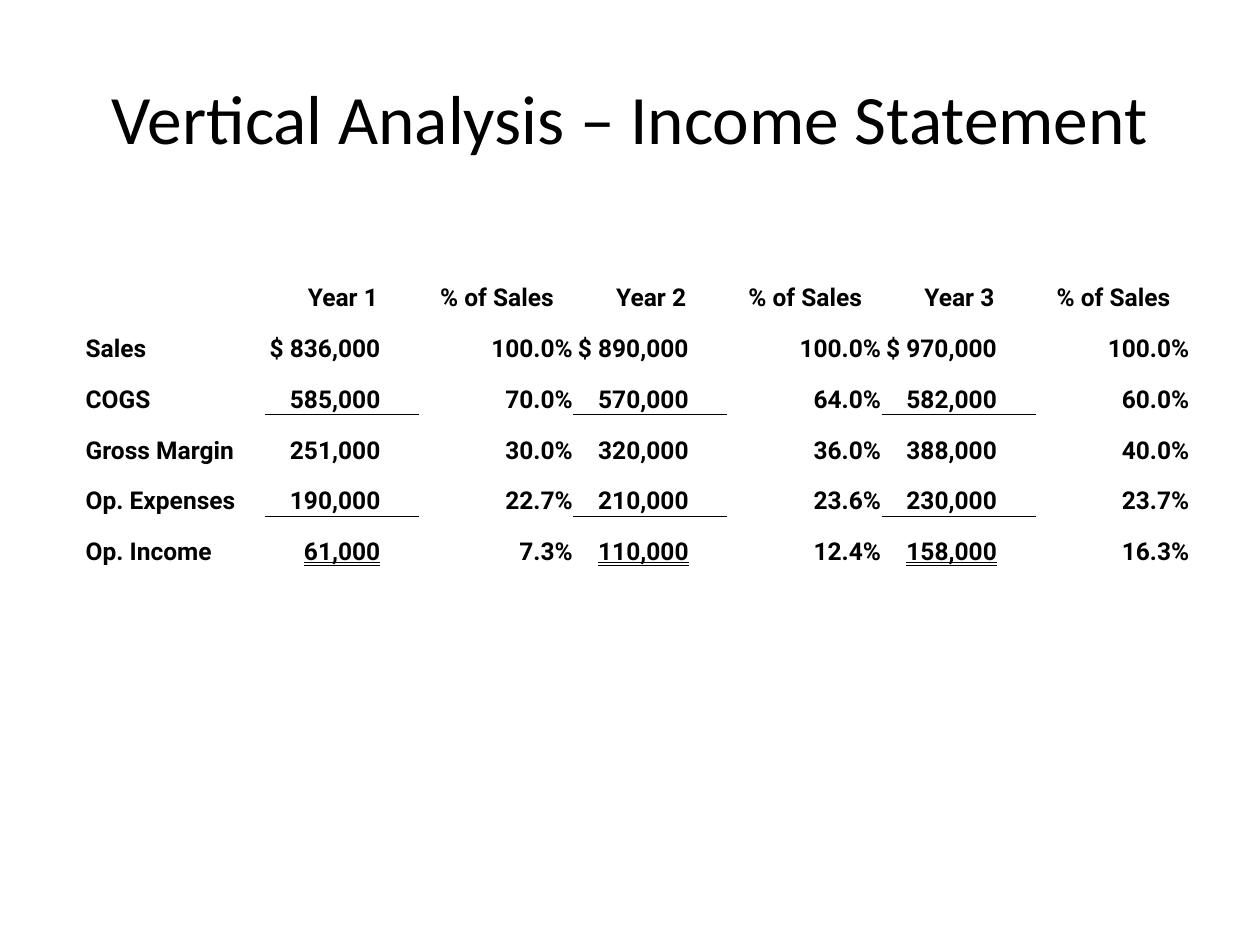
from lxml import etree
from pptx import Presentation
from pptx.dml.color import RGBColor
from pptx.enum.text import MSO_ANCHOR, MSO_UNDERLINE, PP_ALIGN
from pptx.oxml.ns import qn
from pptx.util import Inches, Pt

LEFT, CENTER, RIGHT = PP_ALIGN.LEFT, PP_ALIGN.CENTER, PP_ALIGN.RIGHT
MIDDLE, BOTTOM = MSO_ANCHOR.MIDDLE, MSO_ANCHOR.BOTTOM
DOUBLE = MSO_UNDERLINE.DOUBLE_LINE
TITLE_ONLY = 5
BLACK = "000000"

HEADER = ["", "Year 1", "% of Sales", "Year 2", "% of Sales", "Year 3", "% of Sales"]
STATEMENT = [
    ["Sales", "$ 836,000", "100.0%", "$ 890,000", "100.0%", "$ 970,000", "100.0%"],
    ["COGS", "585,000", "70.0%", "570,000", "64.0%", "582,000", "60.0%"],
    ["Gross Margin", "251,000", "30.0%", "320,000", "36.0%", "388,000", "40.0%"],
    ["Op. Expenses", "190,000", "22.7%", "210,000", "23.6%", "230,000", "23.7%"],
    ["Op. Income", "61,000", "7.3%", "110,000", "12.4%", "158,000", "16.3%"],
]
RULED_ROWS = (2, 4)  # subtotal lines run below COGS and Op. Expenses
LABEL_WIDTH = 1.44
AMOUNT_TAB = Inches(0.9)


def rgb(value):
    return RGBColor.from_string(value)


def add_run(p, text, font, size, bold=False):
    r = p.add_run()
    r.text = text
    r.font.name = font
    r.font.size = Pt(size)
    r.font.bold = bold
    r.font.color.rgb = rgb(BLACK)
    return r


def add_title(slide, text, left, top, width, height):
    sp = slide.shapes.title
    sp.left, sp.top = Inches(left), Inches(top)
    sp.width, sp.height = Inches(width), Inches(height)
    tf = sp.text_frame
    tf.vertical_anchor = MIDDLE
    p = tf.paragraphs[0]
    p.alignment = CENTER
    add_run(p, text, "Calibri", 39.6)


def set_border(cell, side):
    """Draw a thin line on one side of a cell: "lnT" or "lnB"."""
    ln = etree.Element(qn(f"a:{side}"), w=str(Pt(0.5)))
    fill = etree.SubElement(ln, qn("a:solidFill"))
    etree.SubElement(fill, qn("a:srgbClr"), val=BLACK)
    cell._tc.get_or_add_tcPr().insert(0, ln)


def add_right_tab(p, position):
    tabs = etree.SubElement(p._p.get_or_add_pPr(), qn("a:tabLst"))
    etree.SubElement(tabs, qn("a:tab"), pos=str(position), algn="r")


def fill_cell(cell, text, row, col):
    cell.fill.background()
    cell.vertical_anchor = BOTTOM
    cell.margin_left = cell.margin_right = cell.margin_top = Inches(0.01)
    cell.margin_bottom = 0
    if not text:
        return
    is_amount = row > 0 and col % 2 == 1
    p = cell.text_frame.paragraphs[0]
    if row == 0:
        p.alignment = CENTER
    else:
        p.alignment = LEFT if is_amount or col == 0 else RIGHT
    if is_amount:
        add_right_tab(p, AMOUNT_TAB)
        text = "\t" + text
    r = add_run(p, text, "Roboto", 14, bold=True)
    if is_amount:
        if row == len(STATEMENT):
            r.font.underline = DOUBLE
        if row in RULED_ROWS:
            set_border(cell, "lnB")
        if row - 1 in RULED_ROWS:
            set_border(cell, "lnT")


def add_statement(slide, left, top, width, height):
    rows = [HEADER] + STATEMENT
    frame = slide.shapes.add_table(
        len(rows), len(HEADER),
        Inches(left), Inches(top), Inches(width), Inches(height))
    table = frame.table
    table.first_row = table.horz_banding = False
    value_width = (width - LABEL_WIDTH) / (len(HEADER) - 1)
    for i, column in enumerate(table.columns):
        column.width = Inches(value_width if i else LABEL_WIDTH)
    for i, values in enumerate(rows):
        table.rows[i].height = Inches(height / len(rows))
        for j, text in enumerate(values):
            fill_cell(table.cell(i, j), text, i, j)


def main():
    prs = Presentation()
    prs.slide_width, prs.slide_height = Inches(10), Inches(7.5)
    slide = prs.slides.add_slide(prs.slide_layouts[TITLE_ONLY])
    add_title(slide, "Vertical Analysis – Income Statement", 0.5, 0.3, 9, 1.25)
    add_statement(slide, 0.67, 2.08, 8.78, 2.42)
    prs.save("out.pptx")


if __name__ == "__main__":
    main()
